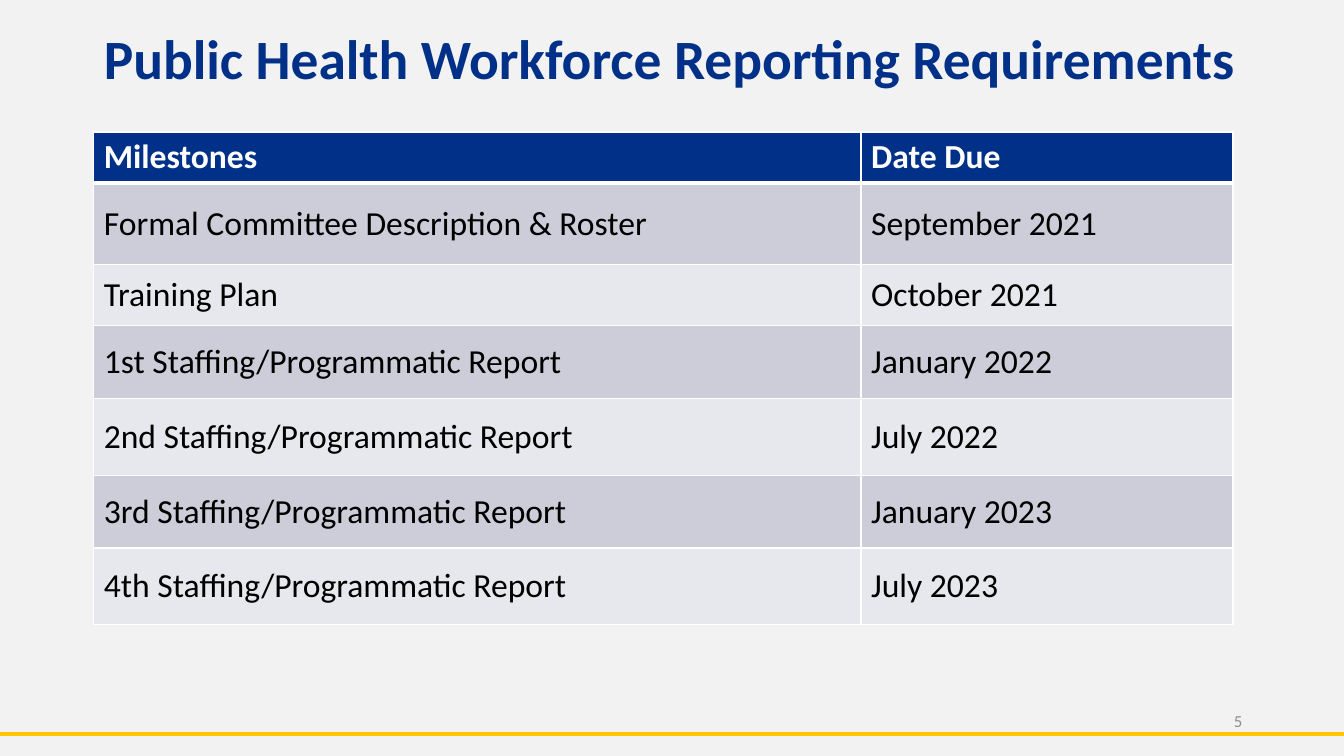
from dataclasses import dataclass

from lxml.etree import SubElement
from pptx import Presentation
from pptx.dml.color import RGBColor as Color
from pptx.enum.shapes import MSO_CONNECTOR as Link
from pptx.enum.text import MSO_ANCHOR as Anchor, MSO_AUTO_SIZE as Fit, PP_ALIGN as Align
from pptx.oxml.ns import qn
from pptx.util import Inches, Pt


@dataclass(frozen=True)
class Theme:
    font: str = "Calibri"
    back: str = "F2F2F2"
    navy: str = "003087"
    gold: str = "FFC600"
    white: str = "FFFFFF"
    black: str = "000000"
    gray: str = "8C8C8C"
    bands: tuple = ("CCCDD9", "E7E8ED")
    title: float = 39.6
    body: float = 24
    small: float = 12


THEME = Theme()
COLS = [7.61, 3.69]
TALL = [0.46, 0.81, 0.6, 0.73, 0.76, 0.72, 0.76]
ROWS = [
    ("Milestones", "Date Due"),
    ("Formal Committee Description & Roster", "September 2021"),
    ("Training Plan", "October 2021"),
    ("1st Staffing/Programmatic Report", "January 2022"),
    ("2nd Staffing/Programmatic Report", "July 2022"),
    ("3rd Staffing/Programmatic Report", "January 2023"),
    ("4th Staffing/Programmatic Report", "July 2023"),
]


def paint(fill, color):
    fill.solid()
    fill.fore_color.rgb = Color.from_string(color)


def write(frame, text, size, color, bold=False, align=Align.LEFT):
    frame.text = text
    para = frame.paragraphs[0]
    para.alignment = align
    font = para.font
    font.name, font.size, font.bold = THEME.font, Pt(size), bold
    font.color.rgb = Color.from_string(color)
    return para


def add_title(slide, text):
    shape = slide.shapes.title
    shape.left, shape.top = Inches(0.93), Inches(0.15)
    shape.width, shape.height = Inches(11.62), Inches(0.92)
    frame = shape.text_frame
    frame.auto_size = Fit.NONE
    frame.vertical_anchor = Anchor.MIDDLE
    para = write(frame, text, THEME.title, THEME.navy, True)
    para.line_spacing = 0.9


def add_rule(slide, top, width):
    line = slide.shapes.add_connector(Link.STRAIGHT, 0, Inches(top), width, Inches(top))
    line.line.color.rgb = Color.from_string(THEME.gold)
    line.line.width = Pt(3)
    SubElement(line._element.spPr, qn("a:effectLst"))


def add_edges(cell, head):
    props = cell._tc.get_or_add_tcPr()
    for spot, side in enumerate(("lnL", "lnR", "lnT", "lnB")):
        width = Pt(3 if head and side == "lnB" else 1)
        edge = props.makeelement(qn(f"a:{side}"), {"w": str(width)})
        solid = SubElement(edge, qn("a:solidFill"))
        SubElement(solid, qn("a:srgbClr"), val=THEME.white)
        props.insert(spot, edge)


def fill_cell(cell, text, row):
    head = row == 0
    paint(cell.fill, THEME.navy if head else THEME.bands[(row - 1) % 2])
    cell.vertical_anchor = Anchor.TOP if head else Anchor.MIDDLE
    write(cell.text_frame, text, THEME.body, THEME.white if head else THEME.black, head)
    add_edges(cell, head)


def add_grid(slide):
    frame = slide.shapes.add_table(
        len(ROWS), len(COLS), Inches(0.93), Inches(1.31),
        Inches(sum(COLS)), Inches(sum(TALL)))
    table = frame.table
    for col, width in zip(table.columns, COLS):
        col.width = Inches(width)
    for row, height in zip(table.rows, TALL):
        row.height = Inches(height)
    for row, texts in enumerate(ROWS):
        for col, text in enumerate(texts):
            fill_cell(table.cell(row, col), text, row)


def add_number(slide, text):
    box = slide.shapes.add_textbox(Inches(9.42), Inches(6.95), Inches(3), Inches(0.4))
    frame = box.text_frame
    frame.word_wrap = True
    frame.vertical_anchor = Anchor.MIDDLE
    write(frame, text, THEME.small, THEME.gray, align=Align.RIGHT)


def main():
    deck = Presentation()
    deck.slide_width, deck.slide_height = Inches(13.33), Inches(7.5)
    slide = deck.slides.add_slide(deck.slide_layouts[5])
    paint(slide.background.fill, THEME.back)
    add_rule(slide, 7.28, deck.slide_width)
    add_title(slide, "Public Health Workforce Reporting Requirements")
    add_grid(slide)
    add_number(slide, "5")
    deck.save("out.pptx")


if __name__ == "__main__":
    main()
